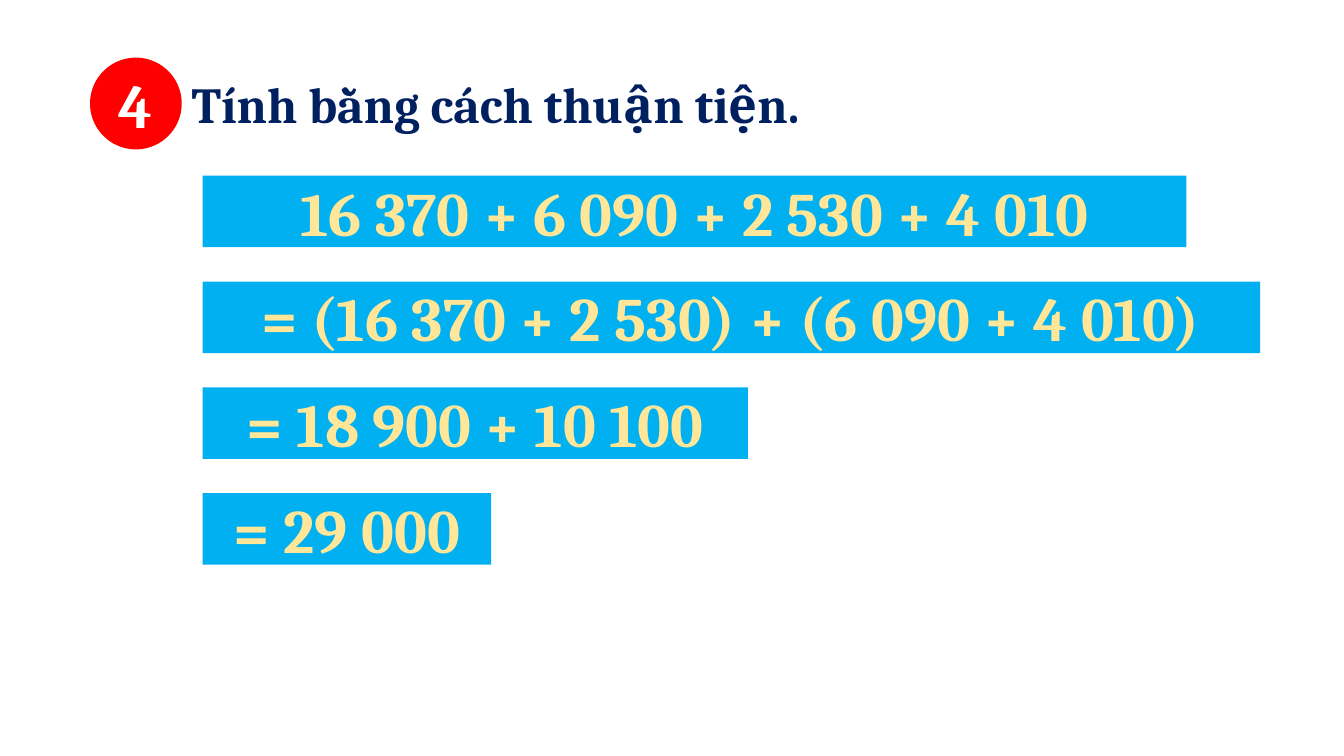
from dataclasses import dataclass

from pptx import Presentation
from pptx.dml.color import RGBColor
from pptx.enum.shapes import MSO_SHAPE
from pptx.enum.text import MSO_ANCHOR, MSO_AUTO_SIZE, PP_ALIGN
from pptx.util import Pt

NAVY, RED, SKY, CREAM, WHITE = "002060", "FF0000", "00B0F0", "FFE699", "FFFFFF"
ROW_LEFT, ROW_TOP, ROW_HEIGHT, ROW_STEP = 144.8, 125.5, 51.1, 75.6


@dataclass
class Block:
    text: str
    left: float
    top: float
    width: float
    height: float
    fill: str
    color: str
    preset: MSO_SHAPE = MSO_SHAPE.RECTANGLE


def rgb(value: str) -> RGBColor:
    return RGBColor.from_string(value)


def write(frame, text: str, size: float, color: str, align: PP_ALIGN) -> None:
    paragraph = frame.paragraphs[0]
    paragraph.alignment = align
    run = paragraph.add_run()
    run.text = text
    for attribute, value in {"name": "Cambria", "size": Pt(size), "bold": True}.items():
        setattr(run.font, attribute, value)
    run.font.color.rgb = rgb(color)


def draw_block(slide, block: Block) -> None:
    shape = slide.shapes.add_shape(
        block.preset, Pt(block.left), Pt(block.top), Pt(block.width), Pt(block.height))
    shape.shadow.inherit = False
    shape.fill.solid()
    shape.fill.fore_color.rgb = rgb(block.fill)
    shape.line.fill.background()
    shape.text_frame.word_wrap = True
    shape.text_frame.vertical_anchor = MSO_ANCHOR.MIDDLE
    write(shape.text_frame, block.text, 44, block.color, PP_ALIGN.CENTER)


def main() -> None:
    presentation = Presentation()
    presentation.slide_width, presentation.slide_height = Pt(960), Pt(540)
    slide = presentation.slides.add_slide(presentation.slide_layouts[6])

    # Exercise number and instruction
    draw_block(slide, Block("4", 64.3, 41.2, 65.5, 65.5, RED, WHITE, MSO_SHAPE.OVAL))
    instruction = slide.shapes.add_textbox(Pt(129.8), Pt(49), Pt(741), Pt(51)).text_frame
    instruction.word_wrap = True
    instruction.auto_size = MSO_AUTO_SIZE.SHAPE_TO_FIT_TEXT
    write(instruction, "Tính bằng cách thuận tiện.", 36, NAVY, PP_ALIGN.JUSTIFY)

    # Steps of the calculation
    steps = [
        ("16 370 + 6 090 + 2 530 + 4 010", 702.7),
        ("= (16 370 + 2 530) + (6 090 + 4 010)", 755.3),
        ("= 18 900 + 10 100", 389.5),
        ("= 29 000", 206),
    ]
    for index, (expression, width) in enumerate(steps):
        top = ROW_TOP + index * ROW_STEP
        draw_block(slide, Block(expression, ROW_LEFT, top, width, ROW_HEIGHT, SKY, CREAM))

    presentation.save("out.pptx")


if __name__ == "__main__":
    main()
